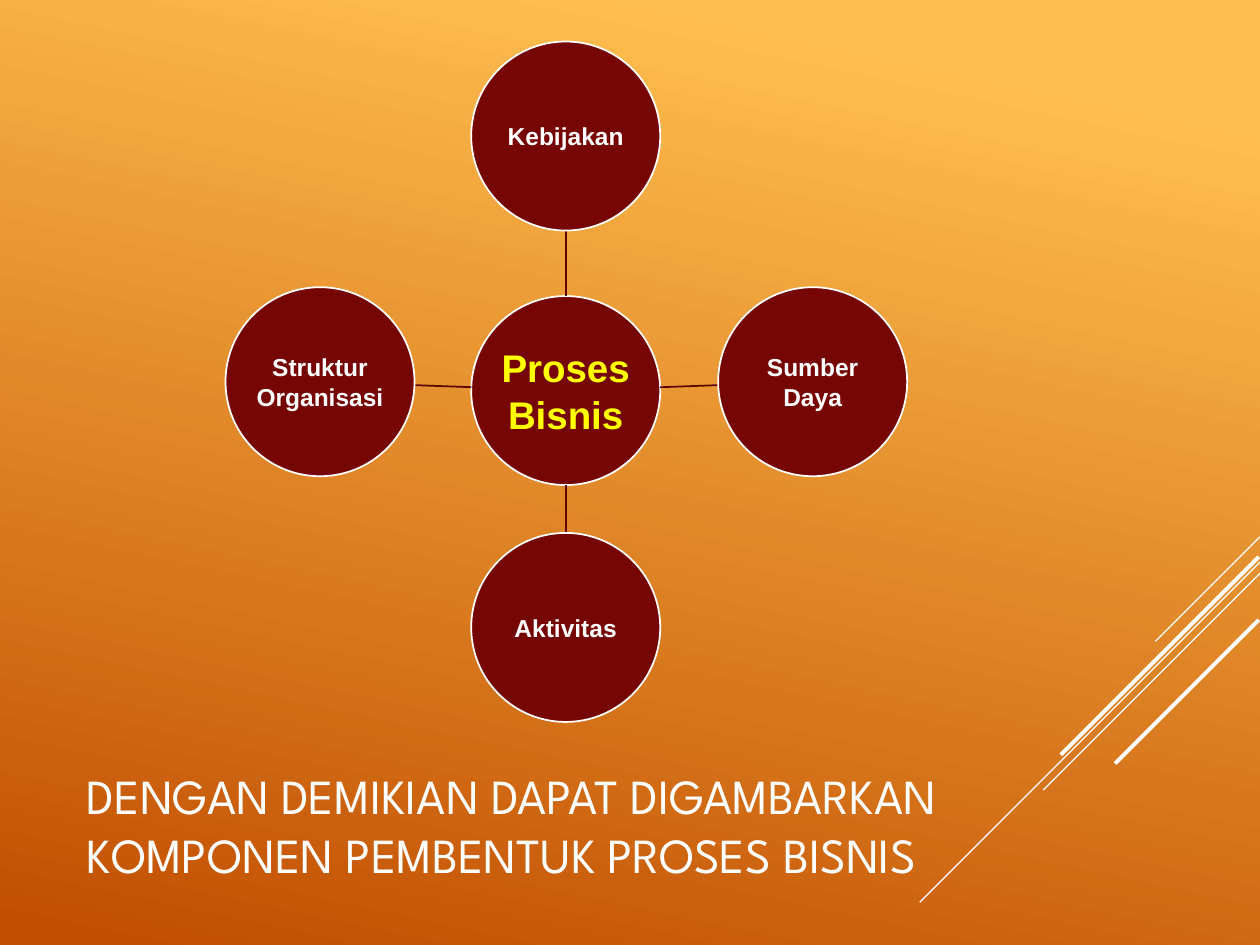
"""Slide on the four components that form a business process."""
from math import hypot
from lxml import etree
from pptx import Presentation
from pptx.dml.color import RGBColor
from pptx.enum import shapes, text
from pptx.oxml import ns
from pptx.util import Inches, Pt

HUES = {"light": "FFBF50", "dark": "C04D00", "disc": "760603",
        "link": "5E0502", "white": "FFFFFF", "yellow": "FFFF00"}


def write(shape, words, font="Arial", size=14, hue="white", bold=True,
          align=text.PP_ALIGN.CENTER, inset=0.01, gap=None):
    frame = shape.text_frame
    frame.word_wrap = True
    frame.vertical_anchor = text.MSO_ANCHOR.MIDDLE
    frame.margin_left = frame.margin_right = Inches(inset)
    frame.margin_top = frame.margin_bottom = Inches(inset)
    frame.text = words
    for para in frame.paragraphs:
        para.alignment = align
        para.line_spacing = gap
        face = para.runs[0].font
        face.name, face.size, face.bold = font, Pt(size), bold
        face.color.rgb = RGBColor.from_string(HUES[hue])


def draw(start, end, hue, width):
    ends = [Inches(n) for n in (*start, *end)]
    line = slide.shapes.add_connector(shapes.MSO_CONNECTOR.STRAIGHT, *ends)
    line.line.color.rgb = RGBColor.from_string(HUES[hue])
    line.line.width = Pt(width)
    etree.SubElement(line._element.spPr, ns.qn("a:effectLst"))


deck = Presentation()
deck.slide_width, deck.slide_height = Inches(10), Inches(7.5)
slide = deck.slides.add_slide(deck.slide_layouts[6])

fill = slide.background.fill
fill.gradient()
fill.gradient_angle = 258
for stop, (place, hue) in zip(fill.gradient_stops, [(0.1, "light"), (1, "dark")]):
    stop.position = place
    stop.color.rgb = RGBColor.from_string(HUES[hue])

for right, top, run, width in [(10, 4.26, 0.83, 0.75), (10, 4.46, 2.7, 0.75),
                               (10, 4.55, 1.72, 0.75), (9.99, 4.42, 1.57, 2.25),
                               (9.99, 4.92, 1.14, 2.25)]:
    draw((right, top), (right - run, top + run), "white", width)

title = slide.shapes.add_textbox(Inches(0.59), Inches(5.95), Inches(8.35), Inches(1.18))
write(title, "DENGAN DEMIKIAN DAPAT DIGAMBARKAN KOMPONEN PEMBENTUK PROSES BISNIS",
      font="League Spartan", size=28, bold=False, align=text.PP_ALIGN.LEFT, inset=0.1)

RAD = 0.75
HUB = (4.49, 3.1)
discs = [("Proses\nBisnis", *HUB, {"size": 22, "hue": "yellow", "inset": 0.02}),
         ("Kebijakan", 4.49, 1.08, {}),
         ("Sumber\nDaya", 6.45, 3.03, {}),
         ("Aktivitas", 4.49, 4.98, {}),
         ("Struktur\nOrganisasi", 2.54, 3.03, {})]
for words, x, y, style in discs:
    dx, dy = x - HUB[0], y - HUB[1]
    dist = hypot(dx, dy)
    if dist:
        ux, uy = RAD * dx / dist, RAD * dy / dist
        draw((HUB[0] + ux, HUB[1] + uy), (x - ux, y - uy), "link", 1)
    disc = slide.shapes.add_shape(shapes.MSO_SHAPE.OVAL, Inches(x - RAD), Inches(y - RAD),
                                  Inches(2 * RAD), Inches(2 * RAD))
    disc.shadow.inherit = False
    disc.fill.solid()
    disc.fill.fore_color.rgb = RGBColor.from_string(HUES["disc"])
    disc.line.color.rgb = RGBColor.from_string(HUES["white"])
    disc.line.width = Pt(1)
    write(disc, words, **style)

deck.save("out.pptx")
